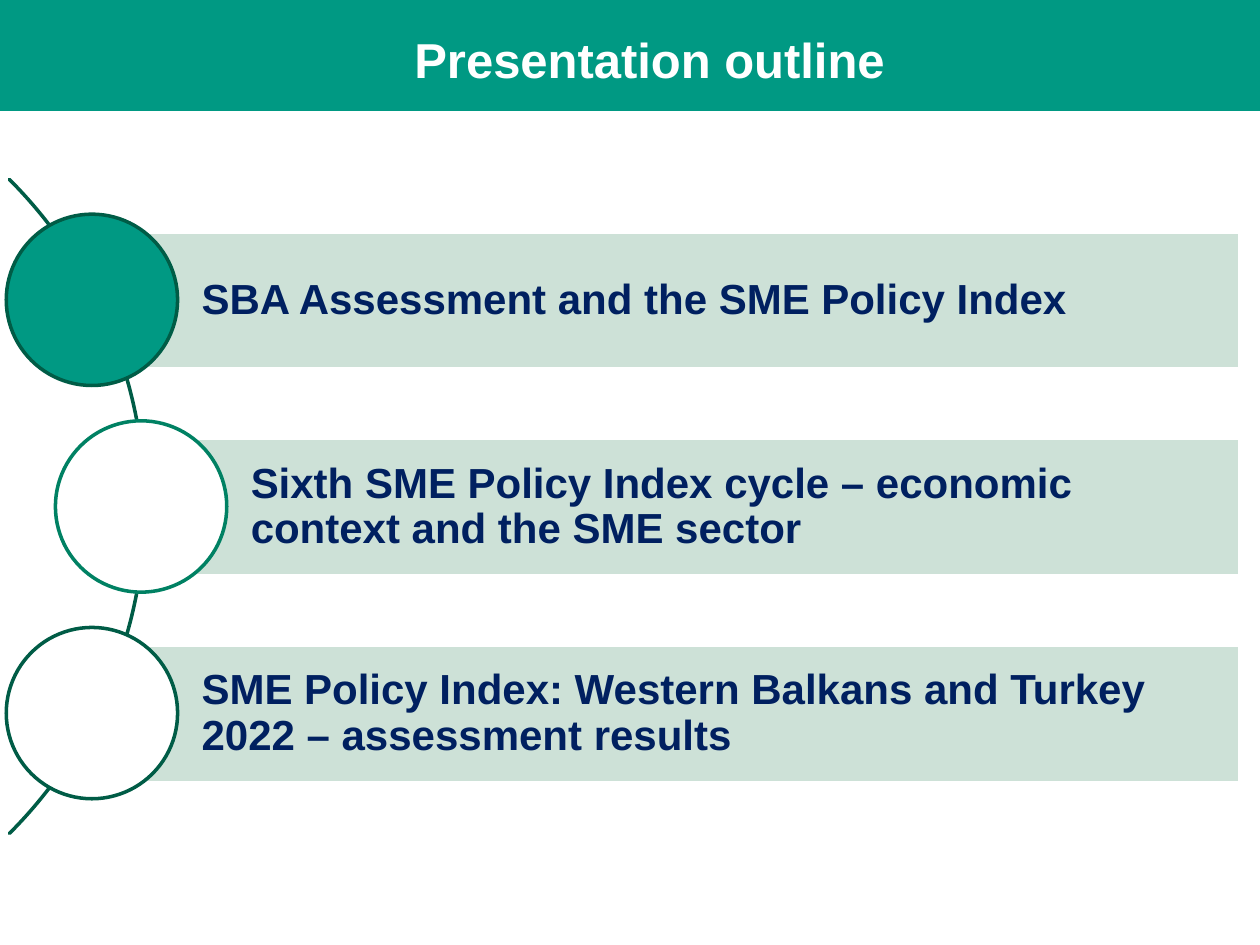
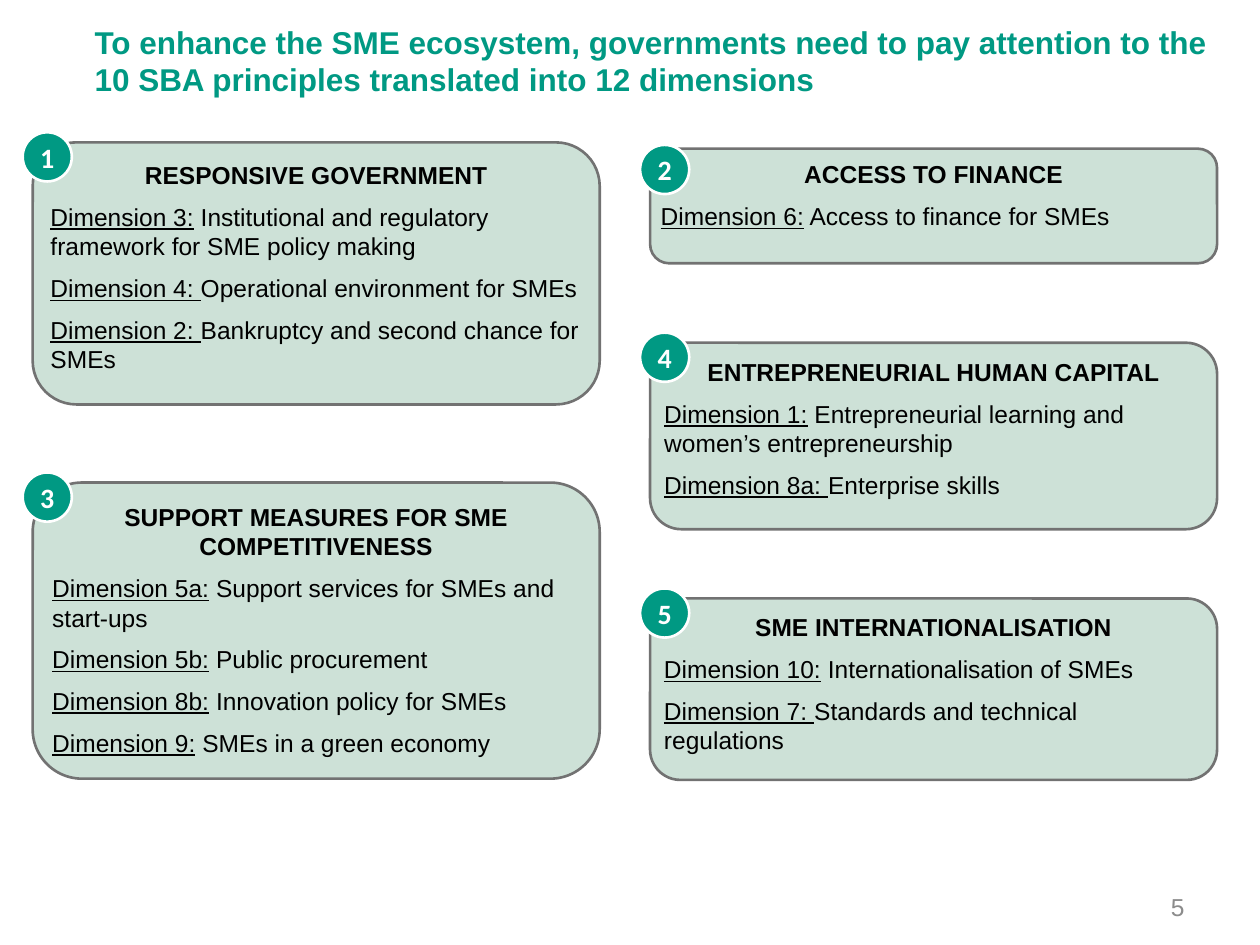
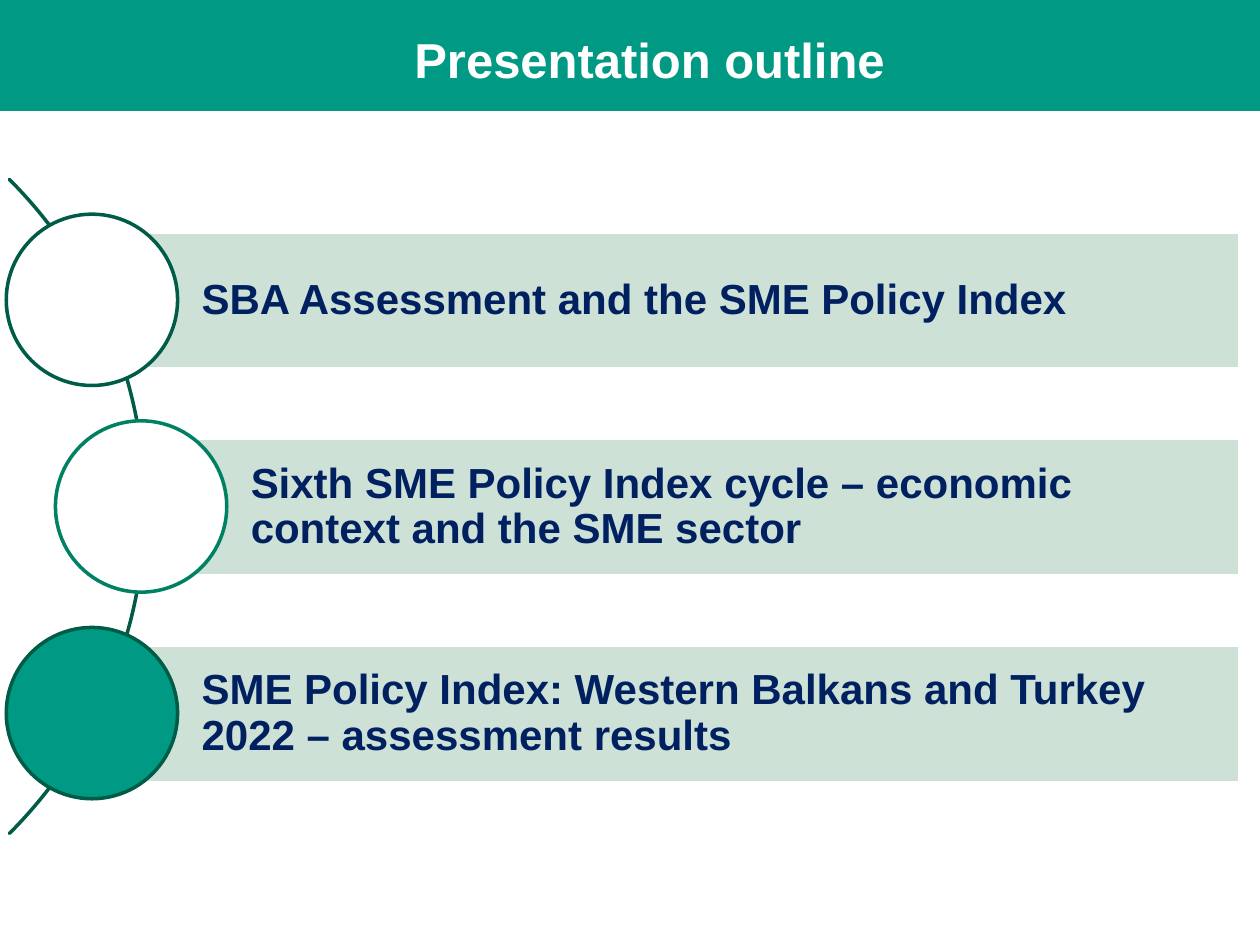
from dataclasses import dataclass

from pptx import Presentation
from pptx.dml.color import RGBColor
from pptx.enum.shapes import MSO_SHAPE as Shape
from pptx.enum.text import MSO_ANCHOR as Anchor, MSO_AUTO_SIZE as AutoSize, PP_ALIGN as Align
from pptx.util import Inches, Pt


@dataclass(frozen=True)
class Theme:
    # Colours
    teal: str = "009983"
    dark_green: str = "005C46"
    mid_green: str = "008163"
    mint: str = "CDE1D7"
    navy: str = "002060"
    white: str = "FFFFFF"
    black: str = "000000"
    border_grey: str = "727272"
    number_grey: str = "8C8C8C"
    # Fonts and type sizes
    font: str = "Arial"
    badge_font: str = "Calibri"
    band_title: int = 28
    topic: int = 24
    headline: int = 18
    badge: int = 16
    body: int = 14


class Deck:
    """Holds the theme and the current slide, and draws each kind of element."""

    def __init__(self, theme):
        self.theme = theme
        self.prs = Presentation()
        self.prs.slide_width, self.prs.slide_height = Inches(10), Inches(7.5)
        self.slide = None

    def new_slide(self):
        self.slide = self.prs.slides.add_slide(self.prs.slide_layouts[5])

    def run(self, paragraph, text, size, color, bold=False, underline=False, font=None):
        run = paragraph.add_run()
        run.text = text
        run.font.name = font or self.theme.font
        run.font.size = Pt(size)
        run.font.bold = bold
        run.font.underline = underline
        run.font.color.rgb = RGBColor.from_string(color)

    def frame(self, shape, insets=(0, 0, 0, 0), anchor=Anchor.MIDDLE, wrap=True):
        frame = shape.text_frame
        frame.auto_size = AutoSize.NONE
        frame.word_wrap = wrap
        frame.vertical_anchor = anchor
        (frame.margin_left, frame.margin_top,
         frame.margin_right, frame.margin_bottom) = map(Inches, insets)
        return frame

    def shape(self, kind, box, fill=None, line=None, width=2):
        shape = self.slide.shapes.add_shape(kind, *map(Inches, box))
        shape.shadow.inherit = False
        if fill:
            shape.fill.solid()
            shape.fill.fore_color.rgb = RGBColor.from_string(fill)
        else:
            shape.fill.background()
        if line:
            shape.line.color.rgb = RGBColor.from_string(line)
            shape.line.width = Pt(width)
        else:
            shape.line.fill.background()
        return shape

    def title(self, text, box, size, color, align):
        title = self.slide.shapes.title
        title.left, title.top, title.width, title.height = map(Inches, box)
        paragraph = self.frame(title).paragraphs[0]
        paragraph.alignment = align
        self.run(paragraph, text, size, color, bold=True)

    def band(self):
        band = self.shape(Shape.RECTANGLE, (0, 0, 10, 0.88), self.theme.teal)
        # The band lies behind the title
        self.slide.shapes.title._element.addprevious(band._element)

    def arc(self):
        arc = self.shape(Shape.BLOCK_ARC, (-6.19, 0.35, 7.34, 7.34),
                         line=self.theme.dark_green)
        for index, value in enumerate((189, 27, 0)):
            arc.adjustments[index] = value

    def topic(self, text, left, top, ring, active):
        t = self.theme
        bar = self.shape(Shape.RECTANGLE, (left, top, 9.84 - left, 1.09), t.mint, t.white)
        paragraph = self.frame(bar, (0.87, 0.07, 0.07, 0.07)).paragraphs[0]
        paragraph.alignment = Align.LEFT
        paragraph.line_spacing = 0.9
        self.run(paragraph, text, t.topic, t.navy, bold=True)
        self.shape(Shape.OVAL, (left - 0.68, top - 0.14, 1.36, 1.36),
                   t.teal if active else t.white, ring)

    def badge(self, number, left, top):
        t = self.theme
        badge = self.shape(Shape.OVAL, (left, top, 0.39, 0.39), t.teal, t.white, 1.5)
        paragraph = self.frame(badge, (0.03,) * 4, wrap=False).paragraphs[0]
        paragraph.alignment = Align.CENTER
        self.run(paragraph, number, t.badge, t.white, bold=True, font=t.badge_font)

    def pillar(self, number, heading, dimensions, left, top, height, badge_rise=0.08):
        t = self.theme
        card = self.shape(Shape.ROUNDED_RECTANGLE, (left, top, 4.5, height),
                          t.mint, t.border_grey, 1.5)
        frame = self.frame(card, (0.04,) * 4, Anchor.TOP)
        paragraph = frame.paragraphs[0]
        paragraph.alignment = Align.CENTER
        self.run(paragraph, heading, t.body, t.black, bold=True)
        for label, subject in dimensions:
            paragraph = frame.add_paragraph()
            paragraph.alignment = Align.LEFT
            paragraph.space_before = Pt(t.body / 2)
            self.run(paragraph, label, t.body, t.black, underline=True)
            self.run(paragraph, subject, t.body, t.black)
        self.badge(number, left - 0.08, top - badge_rise)

    def page_number(self, number):
        box = self.slide.shapes.add_textbox(*map(Inches, (9.06, 7, 0.44, 0.4)))
        paragraph = self.frame(box, (0.1, 0.05, 0.1, 0.05)).paragraphs[0]
        paragraph.alignment = Align.RIGHT
        self.run(paragraph, number, self.theme.body, self.theme.number_grey)


TOPICS = [
    "SBA Assessment and the SME Policy Index",
    "Sixth SME Policy Index cycle – economic context and the SME sector",
    "SME Policy Index: Western Balkans and Turkey 2022 – assessment results",
]

LEFT_COLUMN, RIGHT_COLUMN = 0.26, 5.16

# Number, heading, dimensions, left, top, height, optional badge rise
PILLARS = [
    ("1", "RESPONSIVE GOVERNMENT", [
        ("Dimension 3:", " Institutional and regulatory framework for SME policy making"),
        ("Dimension 4: ", "Operational environment for SMEs"),
        ("Dimension 2: ", "Bankruptcy and second chance for SMEs"),
    ], LEFT_COLUMN, 1.13, 2.08),
    ("2", "ACCESS TO FINANCE", [
        ("Dimension 6:", " Access to finance for SMEs"),
    ], RIGHT_COLUMN, 1.18, 0.91, 0.03),
    ("4", "ENTREPRENEURIAL HUMAN CAPITAL", [
        ("Dimension 1:", " Entrepreneurial learning and women’s entrepreneurship"),
        ("Dimension 8a: ", "Enterprise skills"),
    ], RIGHT_COLUMN, 2.72, 1.48),
    ("3", "SUPPORT MEASURES FOR SME COMPETITIVENESS", [
        ("Dimension 5a:", " Support services for SMEs and start-ups"),
        ("Dimension 5b:", " Public procurement"),
        ("Dimension 8b:", " Innovation policy for SMEs"),
        ("Dimension 9:", " SMEs in a green economy"),
    ], LEFT_COLUMN, 3.83, 2.35),
    ("5", "SME INTERNATIONALISATION", [
        ("Dimension 10:", " Internationalisation of SMEs"),
        ("Dimension 7: ", "Standards and technical regulations"),
    ], RIGHT_COLUMN, 4.75, 1.44),
]


def outline_slide(deck, active_topic):
    t = deck.theme
    deck.new_slide()
    deck.band()
    deck.title("Presentation outline", (0.64, 0.27, 9.03, 0.4),
               t.band_title, t.white, Align.CENTER)
    deck.arc()
    # The middle topic sits further out on the arc
    places = [(0.73, t.dark_green), (1.12, t.mid_green), (0.73, t.dark_green)]
    for index, (topic, (left, ring)) in enumerate(zip(TOPICS, places)):
        deck.topic(topic, left, 1.84 + index * 1.64, ring, index == active_topic)


def dimensions_slide(deck):
    t = deck.theme
    deck.new_slide()
    deck.title("To enhance the SME ecosystem, governments need to pay attention to the "
               "10 SBA principles translated into 12 dimensions",
               (0.75, 0.28, 8.98, 0.4), t.headline, t.teal, Align.LEFT)
    for pillar in PILLARS:
        deck.pillar(*pillar)
    deck.page_number("5")


def main():
    deck = Deck(Theme())
    outline_slide(deck, active_topic=0)
    dimensions_slide(deck)
    outline_slide(deck, active_topic=2)
    deck.prs.save("out.pptx")


if __name__ == "__main__":
    main()
